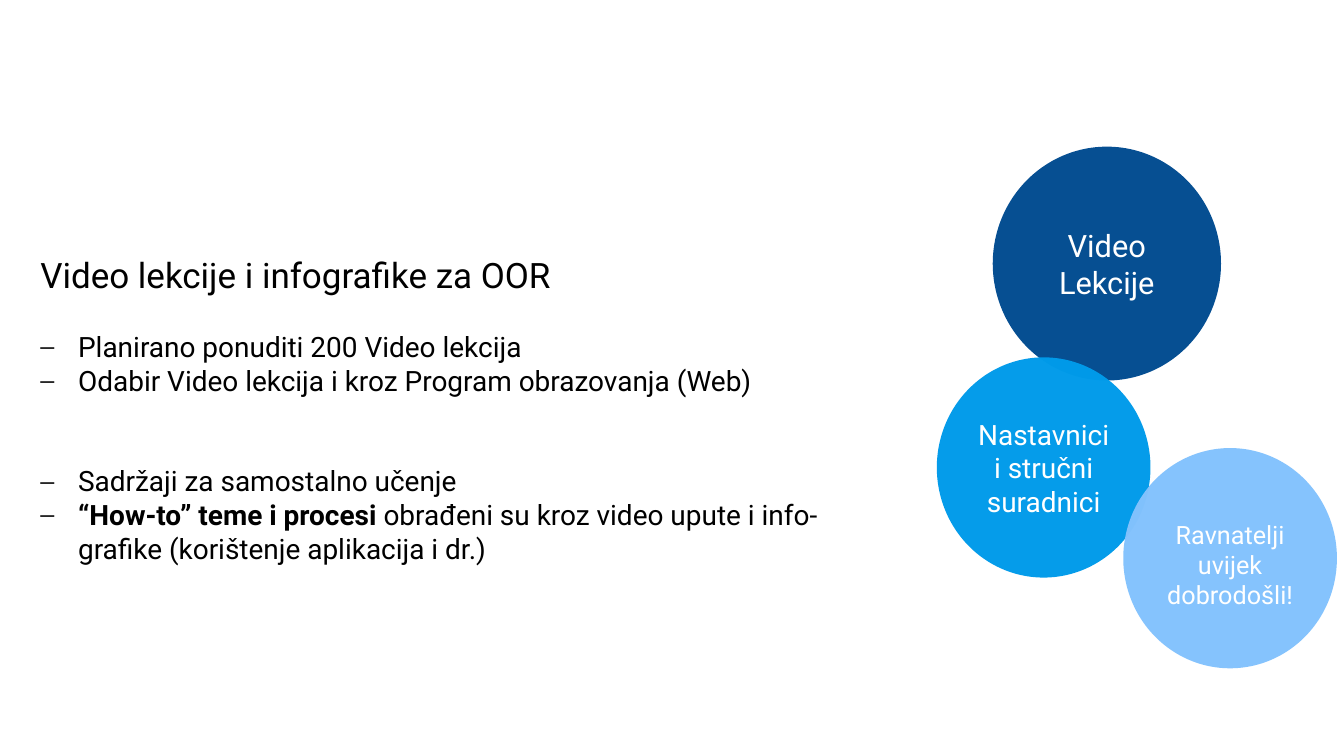
from lxml.etree import SubElement
from pptx import Presentation
from pptx.dml.color import RGBColor
from pptx.enum.shapes import MSO_SHAPE as Shape
from pptx.enum.text import MSO_ANCHOR as Anchor, PP_ALIGN as Align
from pptx.oxml.ns import qn
from pptx.util import Inches, Pt

THEME = {
    "font": "Roboto",
    "text": "000000",
    "circle_text": "FFFFFF",
    "navy": "024C90",
    "blue": "009BEA",
    "sky": "83C2FD",
    "opacity": 98,
    "title_size": 50,
    "body_size": 40,
}

TITLE = "Video lekcije i infografike za OOR"
# Each bullet: space before in points, then (text, bold) spans
BULLETS = [
    (48, [("Planirano ponuditi 200 Video lekcija", False)]),
    (0, [("Odabir Video lekcija i kroz Program obrazovanja (Web)", False)]),
    (96, [("Sadržaji za samostalno učenje", False)]),
    (0, [("“How-to” teme i procesi ", True),
         ("obrađeni su kroz video upute i info-grafike (korištenje aplikacija i dr.)", False)]),
]
# Each circle: text, fill, type size, (left, top, width, height), top inset
CIRCLES = [
    ("Video Lekcije", "navy", 44, (19.7, 2.91, 4.53, 4.64), 0.05),
    ("Nastavnici i stručni suradnici", "blue", 40, (18.59, 7.09, 4.24, 4.37), 0.05),
    ("Ravnatelji uvijek dobrodošli!", "sky", 36, (22.29, 8.89, 4.24, 4.37), 0.29),
]
TEXT_AREA = (0.72, 4.96, 16.48, 7.2)
TEXT_INSET = 0.08
BULLET_INDENT = 0.75


def set_attributes(target, values):
    for name, value in values.items():
        setattr(target, name, value)


def add_span(para, text, size, color, bold=False):
    span = para.add_run()
    span.text = text
    set_attributes(span.font, {"name": THEME["font"], "size": Pt(size), "bold": bold})
    span.font.color.rgb = RGBColor.from_string(THEME[color])


def add_dash(para):
    """Give the paragraph a hanging dash bullet."""
    properties = para._p.get_or_add_pPr()
    properties.set("marL", str(Inches(BULLET_INDENT)))
    properties.set("indent", str(-Inches(BULLET_INDENT)))
    SubElement(properties, qn("a:buFont"), typeface=THEME["font"])
    SubElement(properties, qn("a:buChar"), char="⎯")


def add_lesson_text(slide):
    box = slide.shapes.add_textbox(*map(Inches, TEXT_AREA))
    frame = box.text_frame
    set_attributes(frame, {"word_wrap": True, "vertical_anchor": Anchor.TOP})
    set_attributes(frame, {f"margin_{side}": Inches(TEXT_INSET)
                           for side in ("left", "top", "right", "bottom")})
    add_span(frame.paragraphs[0], TITLE, THEME["title_size"], "text")
    for space, spans in BULLETS:
        para = frame.add_paragraph()
        add_dash(para)
        para.space_before = Pt(space)
        for text, bold in spans:
            add_span(para, text, THEME["body_size"], "text", bold)


def add_circle(slide, text, fill, size, area, top_inset):
    circle = slide.shapes.add_shape(Shape.OVAL, *map(Inches, area))
    circle.shadow.inherit = False
    circle.line.fill.background()
    circle.fill.solid()
    circle.fill.fore_color.rgb = RGBColor.from_string(THEME[fill])
    color = circle._element.spPr.find(f"{qn('a:solidFill')}/{qn('a:srgbClr')}")
    SubElement(color, qn("a:alpha"), val=str(THEME["opacity"] * 1000))
    frame = circle.text_frame
    set_attributes(frame, {"word_wrap": True, "vertical_anchor": Anchor.MIDDLE,
                           "margin_top": Inches(top_inset)})
    para = frame.paragraphs[0]
    para.alignment = Align.CENTER
    add_span(para, text, size, "circle_text")


def main():
    deck = Presentation()
    set_attributes(deck, {"slide_width": Inches(26.67), "slide_height": Inches(15)})
    slide = deck.slides.add_slide(deck.slide_layouts[6])
    add_lesson_text(slide)
    for circle in CIRCLES:
        add_circle(slide, *circle)
    deck.save("out.pptx")


if __name__ == "__main__":
    main()
